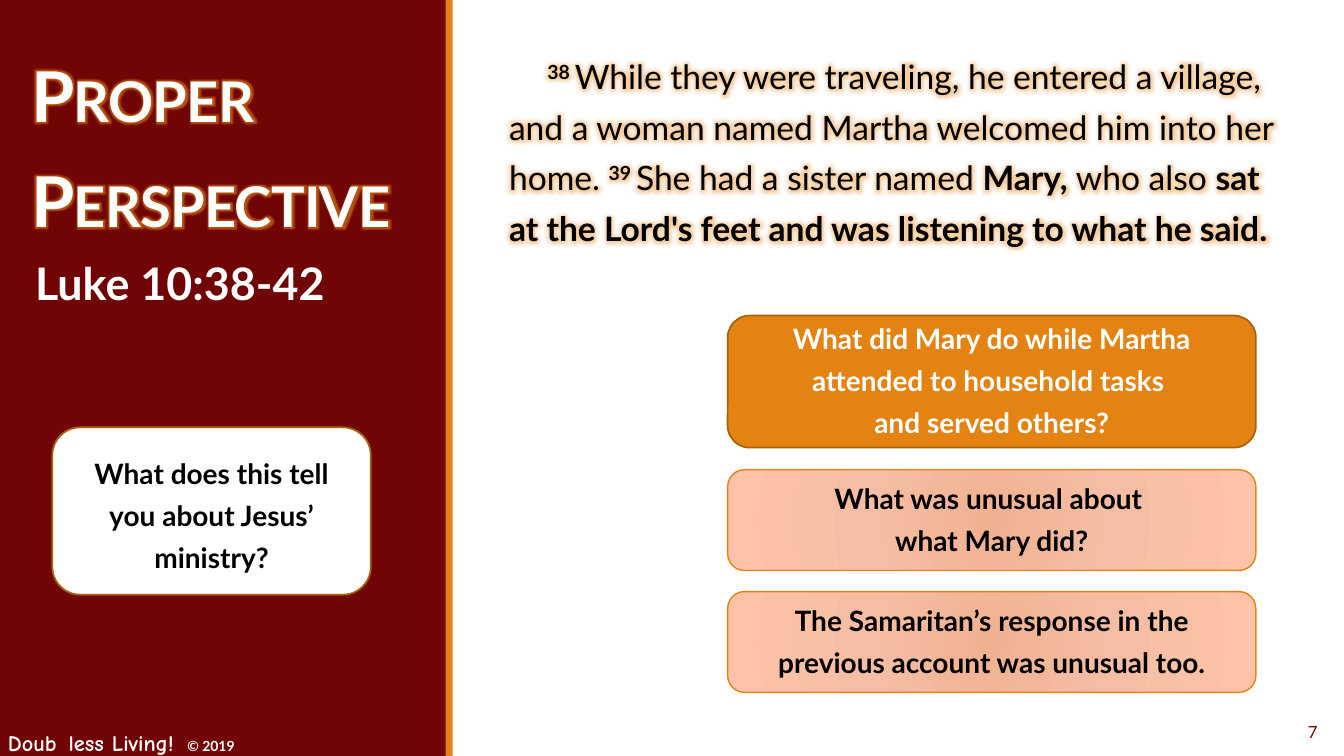
from dataclasses import dataclass
from typing import Optional

from lxml import etree
from pptx import Presentation
from pptx.dml.color import RGBColor
from pptx.enum.shapes import MSO_SHAPE as Preset
from pptx.enum.text import MSO_ANCHOR as Anchor, MSO_AUTO_SIZE as AutoSize, PP_ALIGN as Align
from pptx.oxml.ns import qn
from pptx.util import Pt

COLORS = {
    "maroon": "710505", "orange": "E48312", "brown": "A9610D",
    "white": "FFFFFF", "black": "000000",
    "peach_in": "F0B191", "peach_mid": "F5BEA4", "peach_out": "FDC3A8",
}
PEACH_STOPS = ((0, "peach_in"), (45, "peach_mid"), (100, "peach_out"))


@dataclass
class Words:
    text: str
    size: float
    color: str = "white"
    bold: bool = True
    font: str = "Lato"
    raised: bool = False
    small_caps: bool = False
    spacing: float = 0
    glow: Optional[tuple[float, int]] = None  # radius in points, opacity in percent


@dataclass
class Card:
    box: tuple[float, float, float, float]
    lines: list[str]
    fill: Optional[str]  # None gives the peach gradient
    outline: str
    outline_width: float
    ink: str = "black"
    insets: tuple[float, float, float, float] = (7.2, 0, 7.2, 7.2)


def rgb(name: str) -> RGBColor:
    return RGBColor.from_string(COLORS[name])


def color_node(parent, name: str):
    return etree.SubElement(parent, qn("a:srgbClr"), val=COLORS[name])


def add_words(paragraph, words: Words) -> None:
    run = paragraph.add_run()
    run.text = words.text
    run.font.size, run.font.bold, run.font.name = Pt(words.size), words.bold, words.font
    run.font.color.rgb = rgb(words.color)
    props = run.font._element
    if words.raised:
        props.set("baseline", "30000")
    if words.small_caps:
        props.set("cap", "small")
    if words.spacing:
        props.set("spc", str(round(words.spacing * 100)))
    if words.glow:
        radius, opacity = words.glow
        effects = etree.Element(qn("a:effectLst"))
        glow = etree.SubElement(effects, qn("a:glow"), rad=str(Pt(radius)))
        etree.SubElement(color_node(glow, "orange"), qn("a:alpha"), val=str(opacity * 1000))
        props.find(qn("a:solidFill")).addnext(effects)


def set_frame(shape, insets=(7.2, 3.6, 7.2, 3.6), anchor=Anchor.TOP, align=Align.LEFT):
    """Prepare the text frame and return its first paragraph."""
    frame = shape.text_frame
    frame.word_wrap, frame.auto_size = True, AutoSize.NONE
    frame.vertical_anchor = anchor
    (frame.margin_left, frame.margin_top,
     frame.margin_right, frame.margin_bottom) = map(Pt, insets)
    paragraph = frame.paragraphs[0]
    paragraph.alignment = align
    return paragraph


def add_text(slide, box, words: list[Words], **frame_options):
    paragraph = set_frame(slide.shapes.add_textbox(*map(Pt, box)), **frame_options)
    for part in words:
        add_words(paragraph, part)
    return paragraph


def add_block(slide, preset, box, fill: str):
    block = slide.shapes.add_shape(preset, *map(Pt, box))
    block.shadow.inherit = False
    block.fill.solid()
    block.fill.fore_color.rgb = rgb(fill)
    block.line.fill.background()
    return block


def fill_peach(shape) -> None:
    gradient = etree.Element(qn("a:gradFill"), rotWithShape="1")
    stops = etree.SubElement(gradient, qn("a:gsLst"))
    for position, name in PEACH_STOPS:
        color_node(etree.SubElement(stops, qn("a:gs"), pos=str(position * 1000)), name)
    radial = etree.SubElement(gradient, qn("a:path"), path="circle")
    etree.SubElement(radial, qn("a:fillToRect"), {side: "100000" for side in "ltrb"})
    solid = shape._element.spPr.find(qn("a:solidFill"))
    solid.getparent().replace(solid, gradient)


def add_card(slide, card: Card) -> None:
    shape = add_block(slide, Preset.ROUNDED_RECTANGLE, card.box, card.fill or "peach_mid")
    if card.fill is None:
        fill_peach(shape)
    shape.line.color.rgb = rgb(card.outline)
    shape.line.width = Pt(card.outline_width)
    paragraph = set_frame(shape, card.insets, Anchor.MIDDLE, Align.CENTER)
    paragraph.line_spacing = 1.25
    for index, line in enumerate(card.lines):
        if index:
            paragraph.add_line_break()
        add_words(paragraph, Words(line, 20, card.ink))


def verse(text: str, bold: bool = False, raised: bool = False) -> Words:
    return Words(text, 24, "black", bold, raised=raised, glow=(8, 40))


CARD_LEFT, CARD_WIDTH = 519.8, 377.3
CARDS = [
    Card((CARD_LEFT, 225.4, CARD_WIDTH, 94.3),
         ["What did Mary do while Martha attended to household tasks ", "and served others?"],
         "orange", "brown", 1.25, "white"),
    Card((CARD_LEFT, 335.5, CARD_WIDTH, 72),
         ["What was unusual about ", "what Mary did?"], None, "orange", 1),
    Card((CARD_LEFT, 422.6, CARD_WIDTH, 72),
         ["The Samaritan’s response in the previous account was unusual too."],
         None, "orange", 1),
    Card((37.4, 305.3, 227.5, 119.5),
         ["What does this tell you about Jesus’ ministry?"],
         "white", "brown", 1.25, insets=(7.2, 3.6, 7.2, 3.6)),
]
PASSAGE = [
    verse("38 ", bold=True, raised=True),
    verse("While they were traveling, he entered a village, "
          "and a woman named Martha welcomed him into her home. "),
    verse("39 ", bold=True, raised=True),
    verse("She had a sister named "),
    verse("Mary, ", bold=True),
    verse("who also "),
    verse("sat at the Lord's feet and was listening to what he said.", bold=True),
]
FOOTER = [
    Words("Doub", 16, font="Comic Neue"),
    Words(" ", 24, font="Comic Neue"),
    Words("less Living!", 16, font="Comic Neue"),
    Words(" ", 16, font="Comic Neue", spacing=4),
    Words("© 2019", 10),
]


def main() -> None:
    deck = Presentation()
    deck.slide_width, deck.slide_height = Pt(960), Pt(540)
    slide = deck.slides.add_slide(deck.slide_layouts[5])

    # Side panel with its edge, footer and page number
    add_block(slide, Preset.RECTANGLE, (0, 0, 319, 540), "maroon")
    add_block(slide, Preset.RECTANGLE, (318.4, 0, 5, 540), "orange")
    add_text(slide, (-1.4, 509, 282.2, 36), FOOTER)
    add_text(slide, (851, 508.3, 97.2, 28.8), [Words("7", 12, "maroon", bold=False)],
             anchor=Anchor.MIDDLE, align=Align.RIGHT)

    # Title, raised above the panel, and scripture reference
    title = slide.shapes.title
    slide.shapes._spTree.append(title._element)
    title.left, title.top, title.width, title.height = map(Pt, (15.1, 18.7, 288, 214.6))
    heading = set_frame(title)
    heading.line_spacing = 1.25
    add_words(heading, Words("Proper Perspective", 50, small_caps=True,
                             spacing=-0.5, glow=(5, 60)))
    add_text(slide, (18, 179.3, 267.1, 46.1), [Words("Luke 10:38-42", 32)])

    # Bible passage with an indented first line
    passage = add_text(slide, (363.6, 29.5, 548.6, 195.8), PASSAGE, insets=(0, 3.6, 0, 3.6))
    passage.line_spacing = 1.25
    passage.space_after = Pt(2)
    passage._p.get_or_add_pPr().set("indent", str(Pt(27.4)))

    # Discussion questions
    for card in CARDS:
        add_card(slide, card)

    deck.save("out.pptx")


if __name__ == "__main__":
    main()
